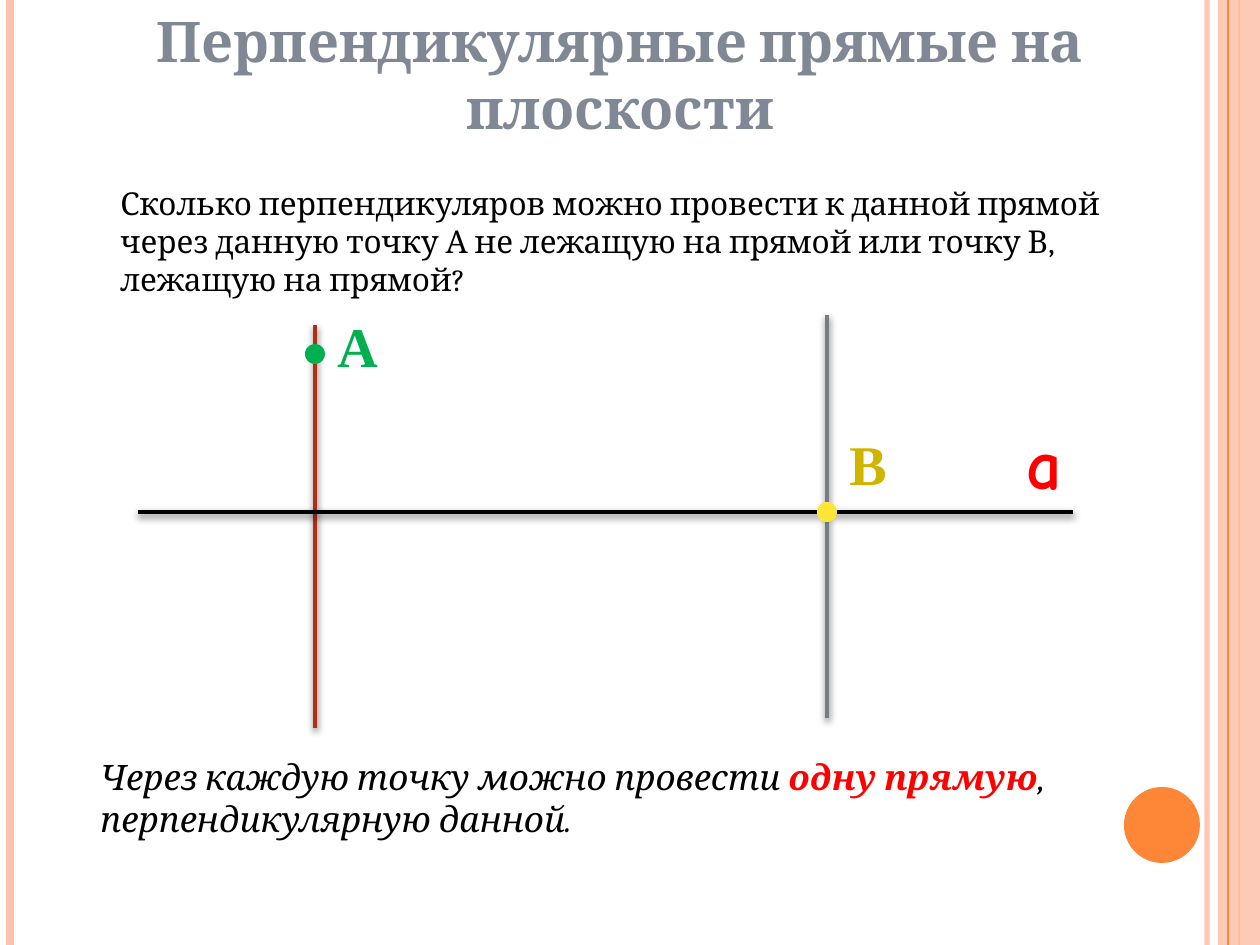
from dataclasses import dataclass

from lxml.etree import SubElement
from pptx import Presentation
from pptx.dml.color import RGBColor
from pptx.enum.shapes import MSO_CONNECTOR, MSO_SHAPE
from pptx.enum.text import PP_ALIGN
from pptx.oxml.ns import qn
from pptx.util import Emu, Pt

EMU_PER_PX = 914400 / 126
SLIDE_W, SLIDE_H = 1260, 945


@dataclass(frozen=True)
class Theme:
    serif: str = "Cambria"
    letter: str = "Times New Roman"
    hand: str = "Comic Neue"
    title_size: int = 32
    question_size: int = 18
    answer_size: int = 20
    point_size: int = 32
    line_name_size: int = 40
    title: str = "818895"
    ink: str = "000000"
    accent: str = "FE8637"
    pale: str = "FEC3AE"
    red: str = "FF0000"
    through_a: str = "B32C16"
    through_b: str = "777C84"
    point_a: str = "00B050"
    point_b: str = "FFE636"
    label_b: str = "CEB500"
    thick: float = 2.75


THEME = Theme()


def px(value):
    return Emu(round(value * EMU_PER_PX))


def set_opacity(element, percent):
    for color in element.iter(qn("a:srgbClr")):
        SubElement(color, qn("a:alpha"), val=str(percent * 1000))


def add_line(shapes, start, end, color, width, shadow=False, opacity=100):
    line = shapes.add_connector(
        MSO_CONNECTOR.STRAIGHT, *(px(v) for v in (*start, *end)))
    line.line.color.rgb = RGBColor.from_string(color)
    line.line.width = Pt(width)
    properties = line._element.spPr
    if opacity < 100:
        set_opacity(properties, opacity)
    effects = SubElement(properties, qn("a:effectLst"))
    if shadow:
        outer = SubElement(
            effects, qn("a:outerShdw"), blurRad=str(Pt(4)), dist=str(Pt(1.6)),
            dir="5400000", rotWithShape="0")
        SubElement(outer, qn("a:srgbClr"), val=THEME.ink)
        set_opacity(outer, 42)


def add_filled(shapes, kind, box, color, opacity=100):
    figure = shapes.add_shape(kind, *(px(v) for v in box))
    figure.shadow.inherit = False
    figure.fill.solid()
    figure.fill.fore_color.rgb = RGBColor.from_string(color)
    figure.line.fill.background()
    if opacity < 100:
        set_opacity(figure._element.spPr, opacity)


def add_text(shapes, box, runs, font, size, align=PP_ALIGN.LEFT):
    frame = shapes.add_textbox(*(px(v) for v in box)).text_frame
    frame.word_wrap = True
    paragraph = frame.paragraphs[0]
    paragraph.alignment = align
    for text, color, bold, italic in runs:
        run = paragraph.add_run()
        run.text = text
        run.font.name = font
        run.font.size = Pt(size)
        run.font.bold = bold
        run.font.italic = italic
        run.font.color.rgb = RGBColor.from_string(color)


def add_point(slide, center, letter, label_at, color, label_color):
    group = slide.shapes.add_group_shape().shapes
    x, y = center
    add_filled(group, MSO_SHAPE.OVAL, (x - 10, y - 10, 20, 20), color)
    add_text(group, (*label_at, 49, 81), [(letter, label_color, True, False)],
             THEME.letter, THEME.point_size)


def add_frame(slide):
    shapes = slide.shapes

    def stripe(x, color, width, opacity=100):
        add_line(shapes, (x, 0), (x, SLIDE_H), color, width, opacity=opacity)

    stripe(1207, THEME.pale, 3, 93)
    stripe(10, THEME.pale, 4.5)
    stripe(1239, THEME.accent, 1.5)
    add_filled(shapes, MSO_SHAPE.RECTANGLE, (1218, 0, 42, SLIDE_H),
               THEME.pale, 87)
    stripe(1228, THEME.accent, 0.75)
    add_filled(shapes, MSO_SHAPE.OVAL, (1124, 787, 76, 76), THEME.accent)


def add_drawing(slide):
    a_x, b_x, base_y = 315, 827, 512
    for x, top, color in ((a_x, 325, THEME.through_a),
                          (b_x, 315, THEME.through_b)):
        add_line(slide.shapes, (x, top), (x, top + 403), color,
                 THEME.thick, shadow=True)

    base = slide.shapes.add_group_shape().shapes
    add_line(base, (138, base_y), (1073, base_y), THEME.ink,
             THEME.thick, shadow=True)
    add_text(base, (1014, 413, 59, 97), [("a", THEME.red, True, False)],
             THEME.hand, THEME.line_name_size)

    add_point(slide, (a_x, 354), "А", (325, 305), THEME.point_a, THEME.point_a)
    add_point(slide, (b_x, base_y), "В", (837, 423),
              THEME.point_b, THEME.label_b)


def main():
    deck = Presentation()
    deck.slide_width, deck.slide_height = px(SLIDE_W), px(SLIDE_H)
    slide = deck.slides.add_slide(deck.slide_layouts[6])
    add_frame(slide)
    add_text(slide.shapes, (39, 0, 1162, 149),
             [("Перпендикулярные прямые на плоскости",
               THEME.title, True, False)],
             THEME.serif, THEME.title_size, PP_ALIGN.CENTER)
    add_text(slide.shapes, (108, 178, 1053, 127),
             [("Сколько перпендикуляров можно провести к данной прямой через "
               "данную точку А не лежащую на прямой или точку В, лежащую на "
               "прямой?", THEME.ink, False, False)],
             THEME.serif, THEME.question_size)
    add_drawing(slide)
    add_text(slide.shapes, (88, 749, 974, 97),
             [("Через каждую точку можно провести ", THEME.ink, False, True),
              ("одну прямую", THEME.red, True, True),
              (", перпендикулярную данной.", THEME.ink, False, True)],
             THEME.serif, THEME.answer_size)
    deck.save("out.pptx")


if __name__ == "__main__":
    main()
